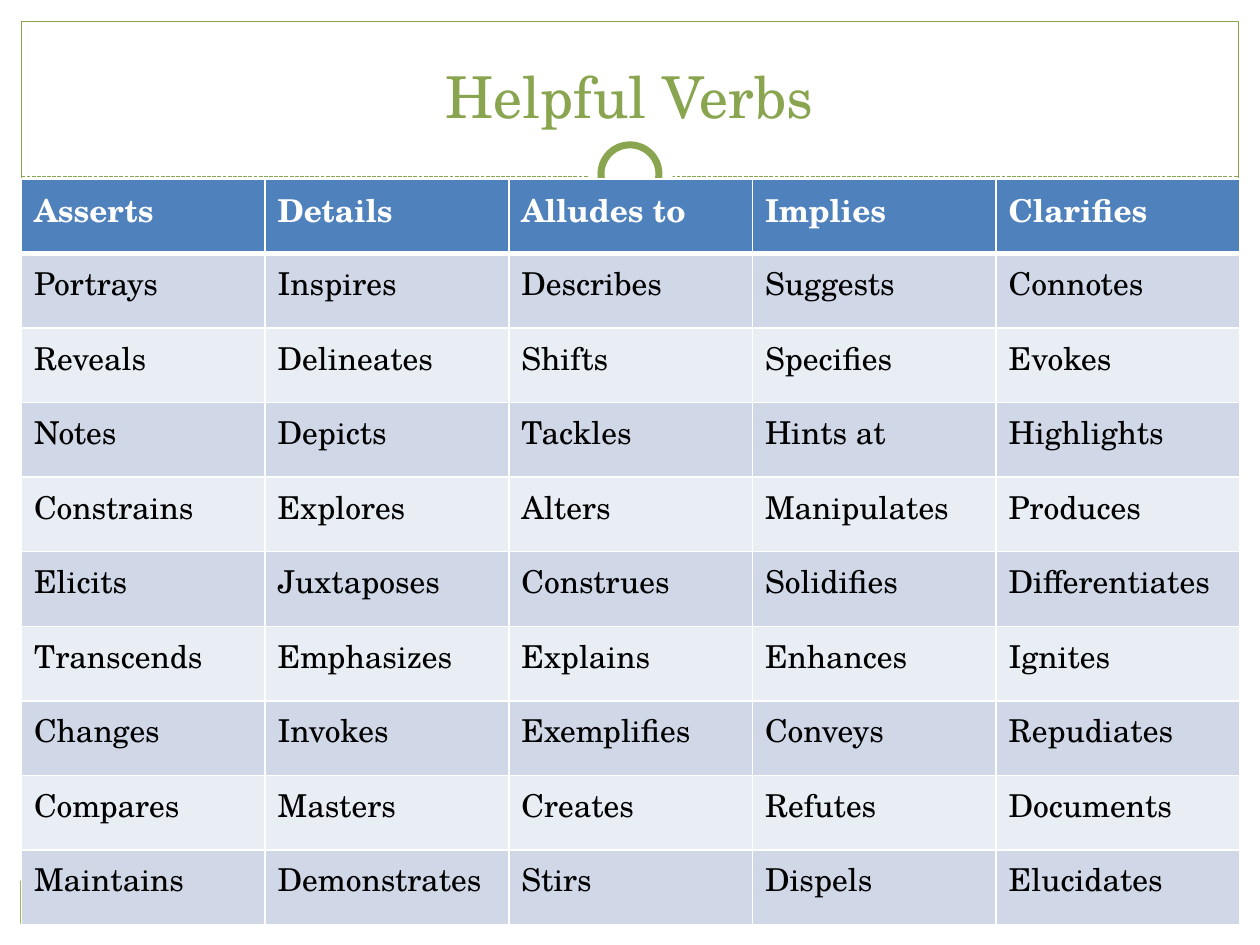
"""Build the "Helpful Verbs" slide: a framed title above a table of verbs."""
from dataclasses import dataclass
from typing import Optional

from pptx import Presentation
from pptx import util as u
from pptx.dml.color import RGBColor
from pptx.enum import dml, shapes, text
from pptx.oxml.xmlchemy import OxmlElement


@dataclass(frozen=True)
class Theme:
    font: str = "TeX Gyre Schola"
    background: str = "EEECE1"
    white: str = "FFFFFF"
    black: str = "000000"
    accent: str = "89A54F"
    footer: str = "9BBB59"
    header: str = "4F81BD"
    bands: tuple = ("D0D8E8", "E9EDF4")
    title_size: float = 33
    cell_size: float = 18
    thin: float = 0.75
    ring: float = 4
    grid: float = 1
    header_rule: float = 3


@dataclass(frozen=True)
class Panel:
    left: float
    top: float
    width: float
    height: float
    fill: Optional[str] = None
    line: Optional[str] = None
    weight: float = 0
    kind: shapes.MSO_SHAPE = shapes.MSO_SHAPE.RECTANGLE


THEME = Theme()
OVAL = shapes.MSO_SHAPE.OVAL
MARGIN = 0.17
RULE_TOP = 1.4
TABLE_TOP, TABLE_WIDTH, TABLE_HEIGHT = 1.42, 9.67, 5.92

BACKDROP = (
    Panel(0, 7.33, 10, MARGIN, THEME.white),
    Panel(0, 0, 10, 1.52, THEME.white),
    Panel(0, 0, MARGIN, 7.5, THEME.white),
    Panel(9.83, 0, MARGIN, 7.5, THEME.white),
    Panel(0.16, 6.99, 9.66, 0.34, THEME.footer),
    Panel(MARGIN, MARGIN, 9.66, 7.16, line=THEME.accent, weight=THEME.thin),
)
MEDALLION = (
    Panel(4.67, 1.05, 0.67, 0.67, THEME.white, kind=OVAL),
    Panel(4.77, 1.15, 0.46, 0.46, THEME.white, THEME.accent, THEME.ring, OVAL),
)
VERBS = (
    ("Asserts", "Details", "Alludes to", "Implies", "Clarifies"),
    ("Portrays", "Inspires", "Describes", "Suggests", "Connotes"),
    ("Reveals", "Delineates", "Shifts", "Specifies", "Evokes"),
    ("Notes", "Depicts", "Tackles", "Hints at", "Highlights"),
    ("Constrains", "Explores", "Alters", "Manipulates", "Produces"),
    ("Elicits", "Juxtaposes", "Construes", "Solidifies", "Differentiates"),
    ("Transcends", "Emphasizes", "Explains", "Enhances", "Ignites"),
    ("Changes", "Invokes", "Exemplifies", "Conveys", "Repudiates"),
    ("Compares", "Masters", "Creates", "Refutes", "Documents"),
    ("Maintains", "Demonstrates", "Stirs", "Dispels", "Elucidates"),
)


def color(value: str) -> RGBColor:
    return RGBColor.from_string(value)


def write(frame, words: str, *, size: float, ink: str, bold: bool = False,
          align=text.PP_ALIGN.LEFT) -> None:
    para = frame.paragraphs[0]
    para.alignment = align
    span = para.add_run()
    span.text = words
    span.font.name = THEME.font
    span.font.size = u.Pt(size)
    span.font.bold = bold
    span.font.color.rgb = color(ink)


def draw_panel(page, panel: Panel) -> None:
    shape = page.shapes.add_shape(
        panel.kind, u.Inches(panel.left), u.Inches(panel.top),
        u.Inches(panel.width), u.Inches(panel.height))
    shape.shadow.inherit = False
    if panel.fill:
        shape.fill.solid()
        shape.fill.fore_color.rgb = color(panel.fill)
    else:
        shape.fill.background()
    if panel.line:
        shape.line.color.rgb = color(panel.line)
        shape.line.width = u.Pt(panel.weight)
    else:
        shape.line.fill.background()


def draw_rule(page) -> None:
    rule = page.shapes.add_connector(
        shapes.MSO_CONNECTOR.STRAIGHT, u.Inches(MARGIN), u.Inches(RULE_TOP),
        u.Inches(10 - MARGIN), u.Inches(RULE_TOP))
    rule.line.color.rgb = color(THEME.accent)
    rule.line.width = u.Pt(THEME.thin)
    rule.line.dash_style = dml.MSO_LINE.SQUARE_DOT
    rule._element.spPr.append(OxmlElement("a:effectLst"))


def draw_title(page, words: str) -> None:
    box = page.shapes.add_textbox(
        u.Inches(0.33), u.Inches(0.25), u.Inches(9.33), u.Inches(0.83))
    box.text_frame.word_wrap = True
    box.text_frame.vertical_anchor = text.MSO_ANCHOR.BOTTOM
    write(box.text_frame, words, size=THEME.title_size, ink=THEME.accent,
          align=text.PP_ALIGN.CENTER)


def add_border(cell, side: str, weight: float) -> None:
    border = OxmlElement(f"a:ln{side}")
    border.set("w", str(u.Pt(weight)))
    fill = OxmlElement("a:solidFill")
    tint = OxmlElement("a:srgbClr")
    tint.set("val", THEME.white)
    fill.append(tint)
    border.append(fill)
    cell._tc.get_or_add_tcPr().append(border)


def fill_cell(cell, words: str, row: int) -> None:
    is_header = row == 0
    heavy_side = {0: "B", 1: "T"}.get(row)
    for side in "LRTB":
        add_border(cell, side, THEME.header_rule if side == heavy_side else THEME.grid)
    cell.fill.solid()
    cell.fill.fore_color.rgb = color(
        THEME.header if is_header else THEME.bands[(row - 1) % 2])
    write(cell.text_frame, words, size=THEME.cell_size, bold=is_header,
          ink=THEME.white if is_header else THEME.black)


def draw_table(page, rows: tuple) -> None:
    table = page.shapes.add_table(
        len(rows), len(rows[0]), u.Inches(MARGIN), u.Inches(TABLE_TOP),
        u.Inches(TABLE_WIDTH), u.Inches(TABLE_HEIGHT)).table
    for row, verbs in enumerate(rows):
        for column, verb in enumerate(verbs):
            fill_cell(table.cell(row, column), verb, row)


def main() -> None:
    deck = Presentation()
    deck.slide_width, deck.slide_height = u.Inches(10), u.Inches(7.5)
    page = deck.slides.add_slide(deck.slide_layouts[6])
    page.background.fill.solid()
    page.background.fill.fore_color.rgb = color(THEME.background)
    for panel in BACKDROP:
        draw_panel(page, panel)
    draw_rule(page)
    for panel in MEDALLION:
        draw_panel(page, panel)
    draw_title(page, "Helpful Verbs")
    draw_table(page, VERBS)
    deck.save("out.pptx")


if __name__ == "__main__":
    main()
